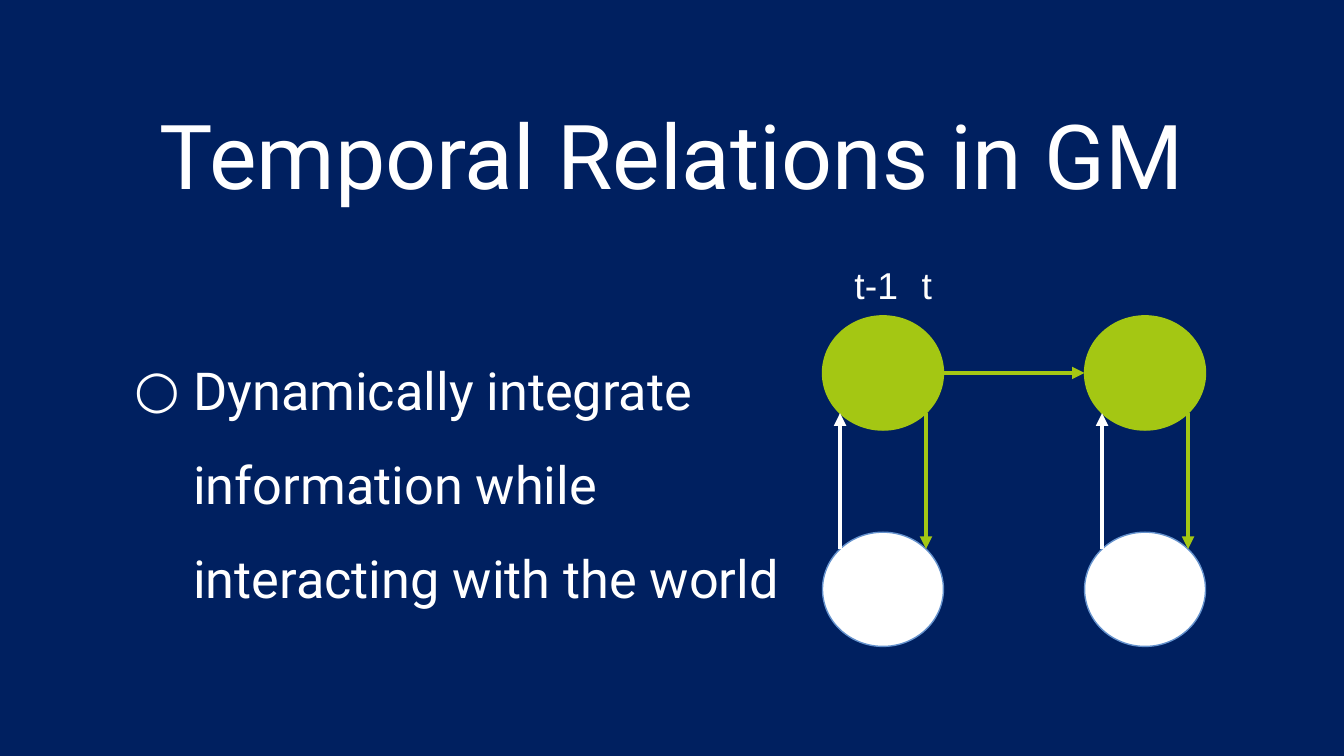
import pptx
import pptx.util
import pptx.dml.color
import pptx.enum.shapes
import pptx.enum.text
import pptx.oxml
import pptx.oxml.ns

SCALE = 4572  # EMU per px, 200 px to the inch
NAVY, WHITE, GREEN, BLUE = "002060", "FFFFFF", "A4C713", "6592CD"
SHAPE = pptx.enum.shapes.MSO_SHAPE
ANCHOR = pptx.enum.text.MSO_ANCHOR
ALIGN = pptx.enum.text.PP_ALIGN

# Node grid
COLS, ROWS = (1224, 1614), (470, 792)
WIDE, HIGH = 180, 170
SIDE, EDGE = 26, 25  # where the arrows meet a node


def px(n):
    return pptx.util.Emu(n * SCALE)


def paint(color, code):
    color.rgb = pptx.dml.color.RGBColor.from_string(code)


def add_xml(parent, tag, **attrs):
    node = pptx.oxml.parse_xml(f"<a:{tag} {pptx.oxml.ns.nsdecls('a')}/>")
    for key, value in attrs.items():
        node.set(key, str(value))
    parent.append(node)
    return node


def set_text(box, text, size, font):
    frame = box.text_frame
    frame.text = text
    frame.word_wrap = True
    frame.auto_size = pptx.enum.text.MSO_AUTO_SIZE.NONE
    frame.margin_left = frame.margin_right = px(20)
    frame.margin_top = frame.margin_bottom = px(20)
    para = frame.paragraphs[0]
    for run in para.runs:
        run.font.size = pptx.util.Pt(size)
        run.font.name = font
        paint(run.font.color, WHITE)
    return para


def add_title(slide, text):
    title = slide.shapes.title
    title.left, title.top = px(68), px(136)
    title.width, title.height = px(1864), px(186)
    para = set_text(title, text, 48, "Roboto")
    para.alignment = ALIGN.CENTER
    title.text_frame.vertical_anchor = ANCHOR.MIDDLE


def add_box(slide, x, y, wide, high, text, size, font):
    box = slide.shapes.add_textbox(px(x), px(y), px(wide), px(high))
    return set_text(box, text, size, font)


def add_point(slide, text):
    para = add_box(slide, 68, 466, 1154, 422, text, 28, "Roboto")
    para.level = 1
    para.line_spacing = 1.5
    props = para._p.get_or_add_pPr()
    props.set("marL", str(px(200)))
    props.set("indent", str(px(-88)))
    add_xml(add_xml(props, "buClr"), "srgbClr", val=WHITE)
    add_xml(props, "buFont", typeface="Roboto")
    add_xml(props, "buChar", char="○")


def add_times(slide, text):
    para = add_box(slide, 1206, 370, 588, 80, text, 20, "Arial")
    props = para._p.get_or_add_pPr()
    props.set("marL", str(px(46)))
    props.set("indent", "0")
    add_xml(add_xml(props, "tabLst"), "tab", pos=px(466), algn="l")


def add_node(slide, x, y, fill, edge):
    node = slide.shapes.add_shape(SHAPE.OVAL, px(x), px(y), px(WIDE), px(HIGH))
    node.shadow.inherit = False
    node.fill.solid()
    paint(node.fill.fore_color, fill)
    paint(node.line.color, edge)
    node.line.width = pptx.util.Pt(0.75)


def add_arrow(slide, x1, y1, x2, y2, color):
    kind = pptx.enum.shapes.MSO_CONNECTOR.STRAIGHT
    arrow = slide.shapes.add_connector(kind, px(x1), px(y1), px(x2), px(y2))
    paint(arrow.line.color, color)
    arrow.line.width = pptx.util.Pt(2.25)
    add_xml(arrow.line._get_or_add_ln(), "tailEnd", type="triangle")
    add_xml(arrow._element.spPr, "effectLst")


def add_step(slide, x):
    """One time step: two nodes with an arrow each way."""
    top, low = ROWS
    add_node(slide, x, top, GREEN, GREEN)
    add_node(slide, x, low, WHITE, BLUE)
    start, end = top + HIGH - EDGE, low + EDGE
    right = x + WIDE - SIDE
    add_arrow(slide, right, start, right, end, GREEN)
    add_arrow(slide, x + SIDE, end, x + SIDE, start, WHITE)


def main():
    deck = pptx.Presentation()
    deck.slide_width, deck.slide_height = px(2000), px(1125)
    slide = deck.slides.add_slide(deck.slide_layouts[5])
    slide.background.fill.solid()
    paint(slide.background.fill.fore_color, NAVY)

    # Wording
    add_title(slide, "Temporal Relations in GM")
    add_point(slide, "Dynamically integrate information while "
                     "interacting with the world")

    # Diagram
    add_times(slide, "t-1\tt")
    for x in COLS:
        add_step(slide, x)
    mid = ROWS[0] + HIGH // 2
    add_arrow(slide, COLS[0] + WIDE, mid, COLS[1], mid, GREEN)

    deck.save("out.pptx")


if __name__ == "__main__":
    main()
